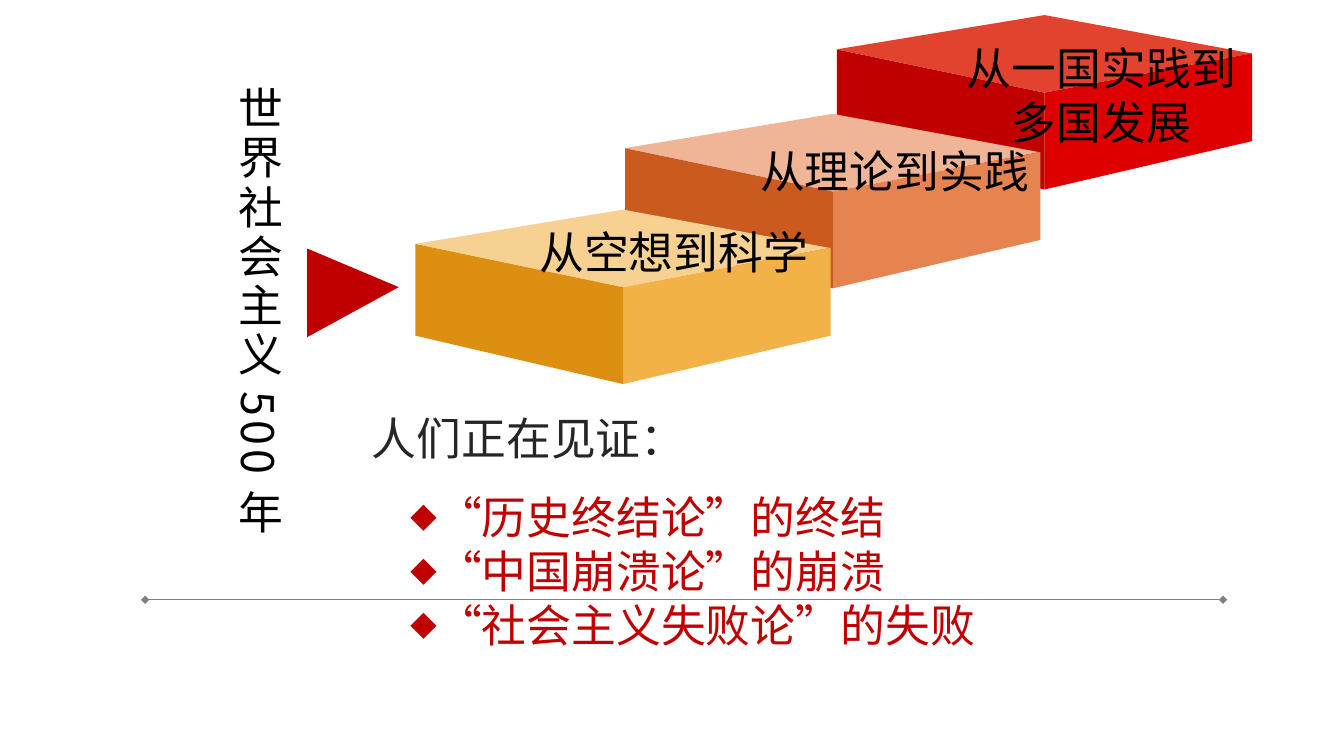
from dataclasses import dataclass

from lxml.etree import SubElement
from pptx import Presentation
from pptx.dml.color import RGBColor as RGB
from pptx.enum.lang import MSO_LANGUAGE_ID as Lang
from pptx.enum.shapes import MSO_CONNECTOR as Connector, MSO_SHAPE as Preset
from pptx.enum.text import MSO_AUTO_SIZE as AutoSize, PP_ALIGN as Align
from pptx.oxml import parse_xml
from pptx.oxml.ns import nsdecls, qn
from pptx.slide import Slide
from pptx.text.text import _Paragraph as Paragraph
from pptx.util import Inches, Pt

Point = tuple[float, float]
Box = tuple[float, float, float, float]


@dataclass(frozen=True)
class Theme:
    """Colours and type sizes of the slide."""
    font: str = "Noto Sans CJK SC"
    size: float = 32
    leading: float = 38.6
    bullet_gap: float = 18
    label: str = "000000"
    heading: str = "262626"
    accent: str = "C00000"
    rule: str = "808080"
    rule_width: float = 0.5


@dataclass(frozen=True)
class Step:
    """One block of the staircase: corner and the colours of its faces."""
    corner: Point
    top: str
    right: str
    left: str


@dataclass(frozen=True)
class Line:
    """One paragraph of text."""
    text: str
    color: str
    bullet: bool = False
    space_before: float = 0
    align: Align = Align.LEFT


@dataclass(frozen=True)
class TextBlock:
    """A box of paragraphs."""
    box: Box
    lines: tuple[Line, ...]
    wrap: bool = False
    vertical: bool = False
    shadow: bool = False
    tracking: int = 0


THEME = Theme()
FRONT, BASE = (2.06, 0.77), (2.06, 1.73)
FACES: dict[str, tuple[Point, ...]] = {
    "top": ((4.11, 0.38), FRONT, (0, 0.34), (2.06, 0)),
    "right": (FRONT, (4.11, 0.38), (4.12, 0.38), (4.12, 1.25), BASE),
    "left": (FRONT, BASE, (0, 1.25), (0, 0.34)),
}
STEPS = (
    Step((8.30, 0.15), "E2432E", "DE0000", "C00000"),
    Step((6.20, 1.13), "EFB596", "E58450", "CA5A1E"),
    Step((4.12, 2.08), "F7D191", "F2B248", "DC8F10"),
)
TEXTS = (
    TextBlock((5.25, 2.18, 2.87, 0.64), (Line("从空想到科学", THEME.label),), shadow=True),
    TextBlock((7.44, 1.37, 2.87, 0.64), (Line("从理论到实践", THEME.label),), shadow=True),
    TextBlock((9.49, 0.35, 2.87, 1.18),
              tuple(Line(text, THEME.label, align=Align.CENTER)
                    for text in ("从一国实践到", "多国发展")), shadow=True),
    TextBlock((2.15, 0.76, 0.74, 4.29), (Line("世界社会主义500年", THEME.label),),
              vertical=True, tracking=300),
    TextBlock((3.59, 4.02, 7.07, 2.51), (
        Line("人们正在见证：", THEME.heading),
        Line("“历史终结论”的终结", THEME.accent, True, THEME.bullet_gap),
        Line("“中国崩溃论”的崩溃", THEME.accent, True),
        Line("“社会主义失败论”的失败", THEME.accent, True),
    ), wrap=True),
)
SHADOW = (
    f'<a:effectLst {nsdecls("a")}><a:outerShdw blurRad="38100" dist="38100" dir="2700000">'
    '<a:srgbClr val="000000"><a:alpha val="43000"/></a:srgbClr></a:outerShdw></a:effectLst>'
)


def draw_step(slide: Slide, step: Step) -> None:
    """Draw the three faces of a block as one group."""
    block = slide.shapes.add_group_shape()
    left, top = step.corner
    for side, outline in FACES.items():
        points = [(Inches(left + x), Inches(top + y)) for x, y in outline]
        builder = block.shapes.build_freeform(*points[0])
        builder.add_line_segments(points[1:], close=True)
        face = builder.convert_to_shape()
        face.shadow.inherit = False
        face.fill.solid()
        face.fill.fore_color.rgb = RGB.from_string(getattr(step, side))
        face.line.fill.background()


def write_line(paragraph: Paragraph, line: Line, block: TextBlock) -> None:
    """Write and format one paragraph."""
    if line.bullet:
        properties = paragraph._p.get_or_add_pPr()
        properties.set("marL", str(Inches(0.38)))
        properties.set("indent", "0")
        SubElement(properties, qn("a:buSzPct"), val="60000")
        SubElement(properties, qn("a:buFont"), typeface=THEME.font)
        SubElement(properties, qn("a:buChar"), char="◆")
    layout = {"alignment": line.align, "line_spacing": Pt(THEME.leading),
              "space_before": Pt(line.space_before)}
    for key, value in layout.items():
        setattr(paragraph, key, value)
    run = paragraph.add_run()
    run.text = line.text
    style = {"name": THEME.font, "size": Pt(THEME.size),
             "language_id": Lang.SIMPLIFIED_CHINESE}
    for key, value in style.items():
        setattr(run.font, key, value)
    run.font.color.rgb = RGB.from_string(line.color)
    properties = run._r.get_or_add_rPr()
    east_asian = SubElement(properties, qn("a:ea"), typeface=THEME.font)
    properties.find(qn("a:latin")).addnext(east_asian)
    if block.tracking:
        properties.set("spc", str(block.tracking))
    if block.shadow:
        properties.find(qn("a:solidFill")).addnext(parse_xml(SHADOW))


def draw_text(slide: Slide, block: TextBlock) -> None:
    """Draw a text box with its paragraphs."""
    frame = slide.shapes.add_textbox(*map(Inches, block.box)).text_frame
    settings = {"word_wrap": block.wrap, "auto_size": AutoSize.SHAPE_TO_FIT_TEXT}
    for key, value in settings.items():
        setattr(frame, key, value)
    if block.vertical:
        frame._txBody.bodyPr.set("vert", "eaVert")
    for index, line in enumerate(block.lines):
        paragraph = frame.add_paragraph() if index else frame.paragraphs[0]
        write_line(paragraph, line, block)


def draw_rule(slide: Slide) -> None:
    """Draw the horizontal rule with a diamond at each end."""
    ends = map(Inches, (1.44, 5.95, 12.13, 5.95))
    rule = slide.shapes.add_connector(Connector.STRAIGHT, *ends)
    rule.line.color.rgb = RGB.from_string(THEME.rule)
    rule.line.width = Pt(THEME.rule_width)
    for end in ("a:headEnd", "a:tailEnd"):
        SubElement(rule.line._get_or_add_ln(), qn(end), type="diamond")
    SubElement(rule._element.spPr, qn("a:effectLst"))


def draw_pointer(slide: Slide) -> None:
    """Draw the triangle that points at the staircase."""
    box = map(Inches, (3.06, 2.45, 0.88, 0.91))
    pointer = slide.shapes.add_shape(Preset.ISOSCELES_TRIANGLE, *box)
    pointer.rotation = 90
    pointer.adjustments[0] = 0.436
    pointer.shadow.inherit = False
    pointer.fill.solid()
    pointer.fill.fore_color.rgb = RGB.from_string(THEME.accent)
    pointer.line.fill.background()


def main() -> None:
    """Build the slide and save it."""
    deck = Presentation()
    deck.slide_width, deck.slide_height = Inches(13.33), Inches(7.5)
    slide = deck.slides.add_slide(deck.slide_layouts[6])
    for step in STEPS:
        draw_step(slide, step)
    draw_rule(slide)
    draw_pointer(slide)
    for block in TEXTS:
        draw_text(slide, block)
    deck.save("out.pptx")


if __name__ == "__main__":
    main()
